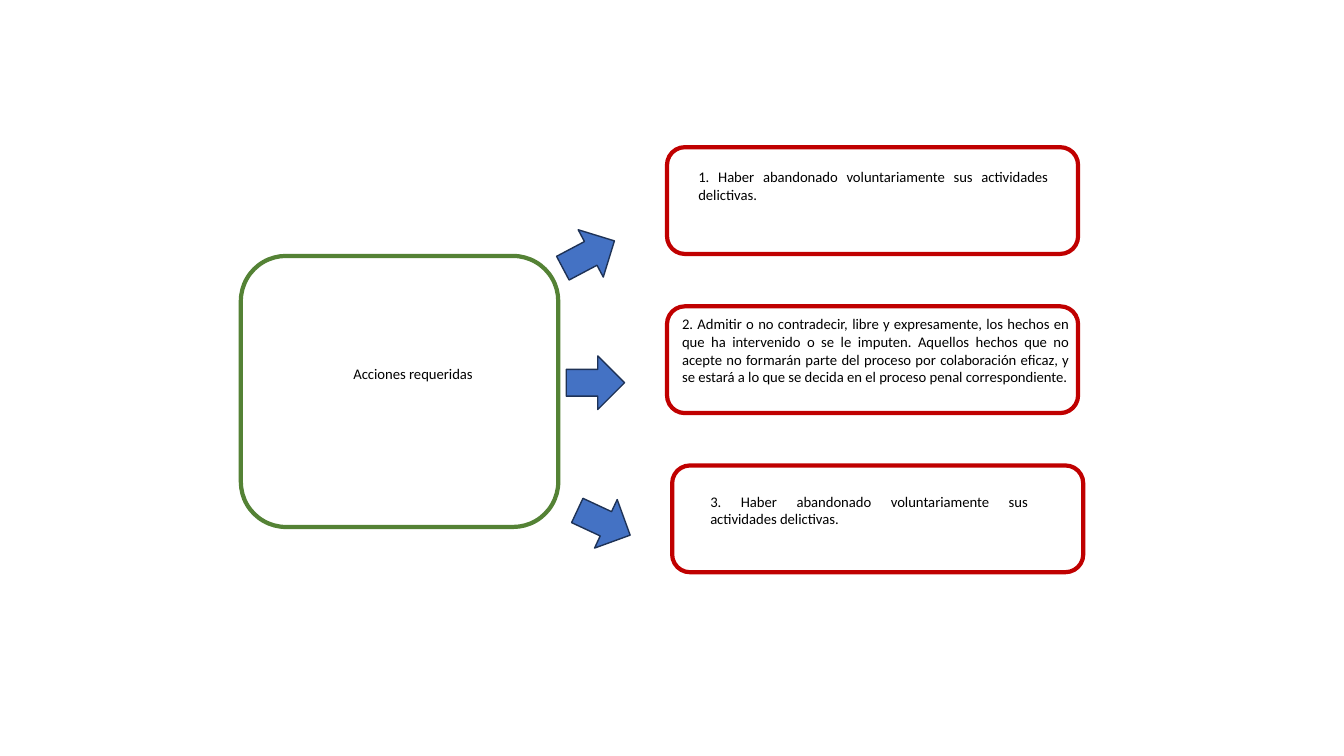
from dataclasses import dataclass

from pptx import Presentation
from pptx.dml.color import RGBColor
from pptx.enum import shapes, text
from pptx.util import Cm, Pt


@dataclass(frozen=True)
class Theme:
    font: str = "Calibri"
    size: float = 10.5
    ink: str = "000000"
    source: str = "548235"
    action: str = "C00000"
    arrow: str = "4472C4"
    arrow_edge: str = "1E3256"
    frame_width: float = 3
    arrow_width: float = 1


THEME = Theme()
KIND = shapes.MSO_SHAPE
ALIGN = text.PP_ALIGN

FRAME_TOP, FRAME_STEP = 3.71, 4.01
FRAME_W, FRAME_H = 10.36, 2.69
ARROW_W, ARROW_H = 1.47, 1.35

# Frame left, text box (left, top, width, height), wording
ACTIONS = [
    (16.81, (17.35, 4.11, 9.32, 1.14),
     "1. Haber abandonado voluntariamente sus actividades delictivas."),
    (16.81, (16.94, 7.82, 10.26, 2.49),
     "2. Admitir o no contradecir, libre y expresamente, los hechos en que ha "
     "intervenido o se le imputen. Aquellos hechos que no acepte no formarán "
     "parte del proceso por colaboración eficaz, y se estará a lo que se decida "
     "en el proceso penal correspondiente."),
    (16.94, (17.65, 12.29, 8.51, 1.14),
     "3. Haber abandonado voluntariamente sus actividades delictivas."),
]

# Left, top, rotation in degrees
ARROWS = [(14.1, 5.74, 332.1), (14.27, 8.97, 0), (14.48, 12.5, 25)]


def add_outlined(slide, kind, box, line, width, fill=None, rotation=0):
    sp = slide.shapes.add_shape(kind, *map(Cm, box))
    sp.shadow.inherit = False
    sp.rotation = rotation
    if fill:
        sp.fill.solid()
        sp.fill.fore_color.rgb = RGBColor.from_string(fill)
    else:
        sp.fill.background()
    sp.line.color.rgb = RGBColor.from_string(line)
    sp.line.width = Pt(width)
    return sp


def add_frame(slide, box, color):
    return add_outlined(slide, KIND.ROUNDED_RECTANGLE, box, color,
                        THEME.frame_width)


def add_arrow(slide, left, top, rotation):
    return add_outlined(slide, KIND.RIGHT_ARROW, (left, top, ARROW_W, ARROW_H),
                        THEME.arrow_edge, THEME.arrow_width,
                        fill=THEME.arrow, rotation=rotation)


def write(sp, wording, align=ALIGN.JUSTIFY, size=THEME.size, color=THEME.ink):
    tf = sp.text_frame
    tf.word_wrap = True
    tf.auto_size = text.MSO_AUTO_SIZE.SHAPE_TO_FIT_TEXT
    tf.vertical_anchor = text.MSO_ANCHOR.TOP
    p = tf.paragraphs[0]
    p.alignment = align
    r = p.add_run()
    r.text = wording
    r.font.name = THEME.font
    r.font.size = Pt(size)
    r.font.color.rgb = RGBColor.from_string(color)


def place_title(slide, wording, box):
    title = slide.shapes.title
    title.left, title.top, title.width, title.height = map(Cm, box)
    write(title, wording, align=ALIGN.CENTER)


def main():
    prs = Presentation()
    prs.slide_width, prs.slide_height = Cm(33.87), Cm(19.05)
    slide = prs.slides.add_slide(prs.slide_layouts.get_by_name("Title Only"))

    add_frame(slide, (6.07, 6.45, 8, 6.83), THEME.source)
    place_title(slide, "Acciones requeridas", (7.11, 9.07, 6.6, 0.71))
    for arrow in ARROWS:
        add_arrow(slide, *arrow)
    for i, (left, text_box, wording) in enumerate(ACTIONS):
        top = FRAME_TOP + i * FRAME_STEP
        add_frame(slide, (left, top, FRAME_W, FRAME_H), THEME.action)
        write(slide.shapes.add_textbox(*map(Cm, text_box)), wording)

    prs.save("out.pptx")


if __name__ == "__main__":
    main()
